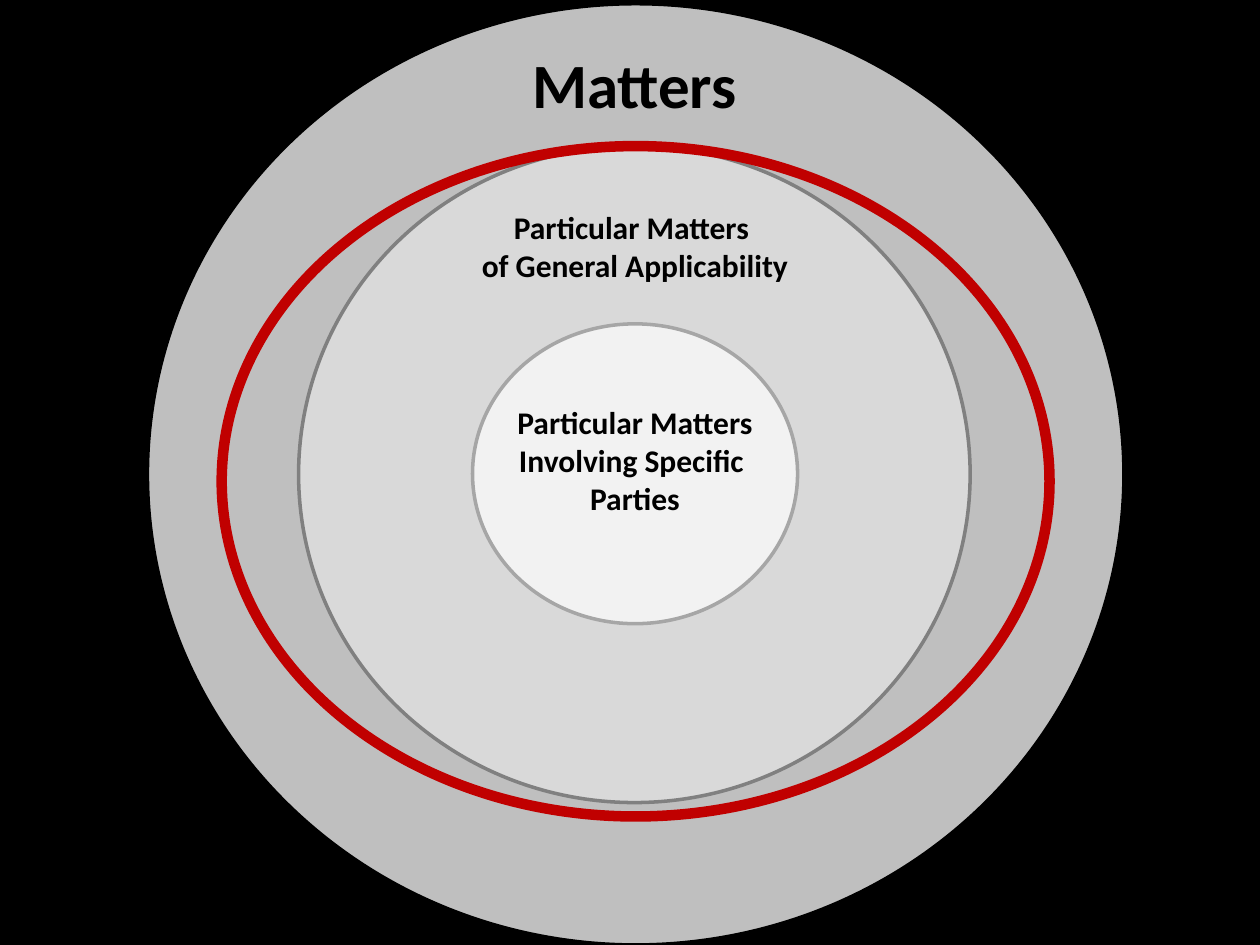
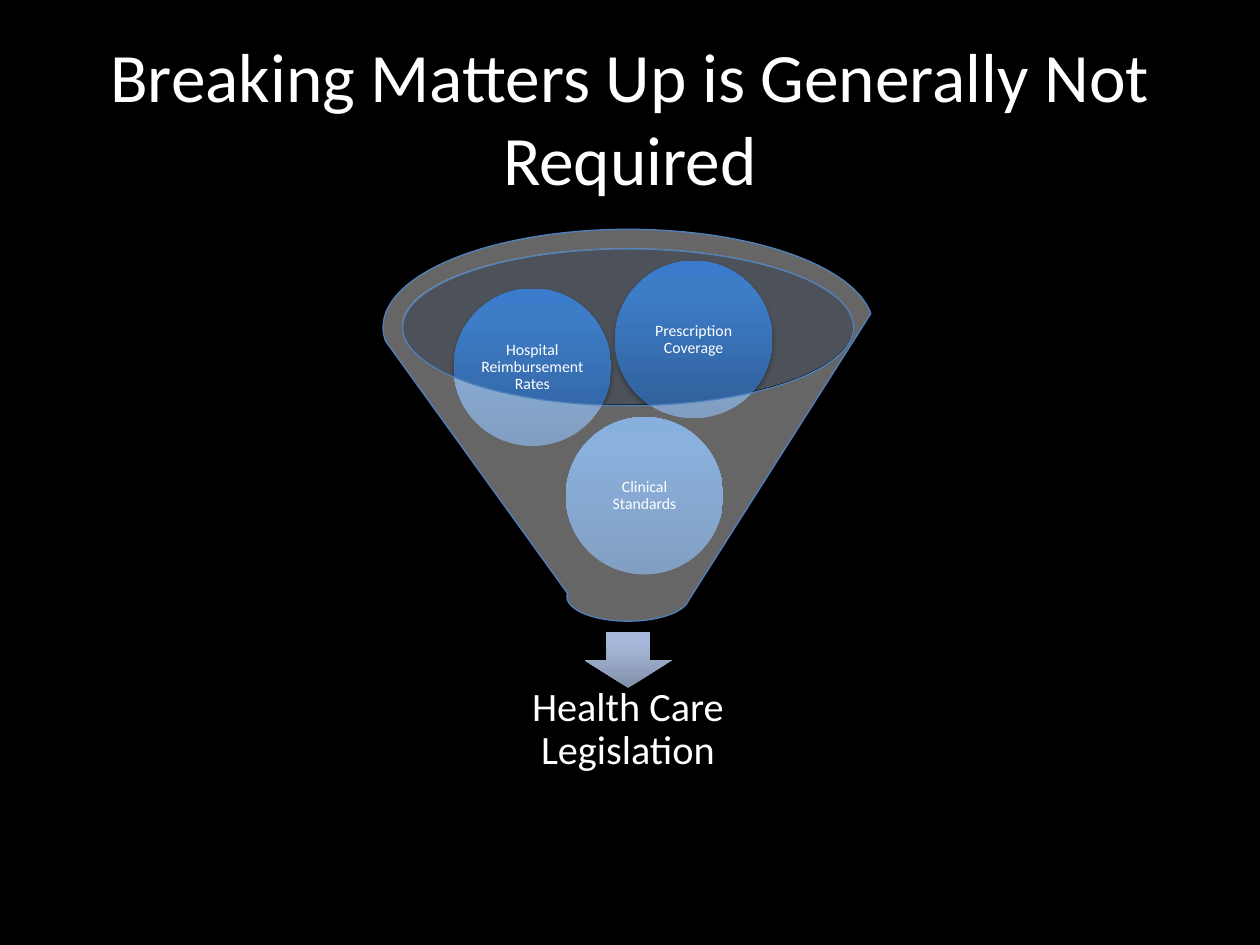
from copy import deepcopy
from dataclasses import dataclass

from lxml import etree
from pptx import Presentation
from pptx.dml.color import RGBColor
from pptx.enum import shapes, text
from pptx.oxml import ns
from pptx.util import Inches, Pt


@dataclass(frozen=True)
class Theme:
    font: str = "Calibri"
    black: str = "000000"
    white: str = "FFFFFF"
    outer: str = "BFBFBF"
    middle: str = "D9D9D9"
    middle_edge: str = "808080"
    inner: str = "F2F2F2"
    inner_edge: str = "A6A6A6"
    highlight: str = "C00000"
    rim: str = "C2CDE1"
    funnel_edge: str = "4F81BD"
    ball: tuple = ("2F5F99", "3D7CC7", "3A7CCB")
    arrow: tuple = ("818FA8", "A7B9DA", "A7BADC")
    stops: tuple = (0, 0.8, 1)
    title: float = 39.6
    heading: float = 36
    result: float = 23
    label: float = 18
    ball_label: float = 9


theme = Theme()
rgb = RGBColor.from_string


def add_figure(slide, kind, box, fill=None, edge=None, width=0, alpha=None):
    """Add a preset shape; a tuple as fill is a bottom-to-top gradient with a soft shadow."""
    figure = slide.shapes.add_shape(kind, *map(Inches, box))
    figure.shadow.inherit = False
    if edge:
        figure.line.color.rgb = rgb(edge)
        figure.line.width = Pt(width)
    else:
        figure.line.fill.background()
    properties = figure._element.spPr
    if fill is None:
        figure.fill.background()
    elif isinstance(fill, tuple):
        figure.fill.gradient()
        figure.fill.gradient_angle = 90
        stop_list = properties.find(".//" + ns.qn("a:gsLst"))
        stop_list.append(deepcopy(stop_list[-1]))
        for stop, color, position in zip(figure.fill.gradient_stops, fill, theme.stops):
            stop.color.rgb = rgb(color)
            stop.position = position
        shadow = etree.SubElement(properties.find(ns.qn("a:effectLst")), ns.qn("a:outerShdw"),
                                  blurRad=str(Pt(3.1)), dist=str(Pt(1.8)), dir="5400000",
                                  rotWithShape="0")
        shade = etree.SubElement(shadow, ns.qn("a:srgbClr"), val=theme.black)
        etree.SubElement(shade, ns.qn("a:alpha"), val="35000")
    else:
        figure.fill.solid()
        figure.fill.fore_color.rgb = rgb(fill)
        if alpha:
            color = properties.find(ns.qn("a:solidFill"))[0]
            etree.SubElement(color, ns.qn("a:alpha"), val=str(alpha * 1000))
    return figure


def write(shape, words, size, color, bold=False, spacing=None, inset=None,
          anchor=text.MSO_ANCHOR.MIDDLE, wrap=True):
    frame = shape.text_frame
    frame.text = words
    frame.word_wrap = wrap
    frame.vertical_anchor = anchor
    frame.auto_size = text.MSO_AUTO_SIZE.NONE if wrap else text.MSO_AUTO_SIZE.SHAPE_TO_FIT_TEXT
    if inset is not None:
        frame.margin_left = frame.margin_right = Inches(inset)
        frame.margin_top = frame.margin_bottom = Inches(inset)
    for paragraph in frame.paragraphs:
        paragraph.alignment = text.PP_ALIGN.CENTER
        if spacing:
            paragraph.line_spacing = spacing
        for run in paragraph.runs:
            run.font.name = theme.font
            run.font.size = Pt(size)
            run.font.bold = bold
            run.font.color.rgb = rgb(color)


prs = Presentation()
prs.slide_width, prs.slide_height = Inches(10), Inches(7.5)
backdrop = prs.slide_master.background.fill
backdrop.solid()
backdrop.fore_color.rgb = rgb(theme.black)
title_only, blank = prs.slide_layouts[5], prs.slide_layouts[6]
OVAL = shapes.MSO_SHAPE.OVAL

# Slide 1: nested kinds of matters
nested = prs.slides.add_slide(blank)
for box, fill, edge in (
    ((1.17, 0.03, 7.75, 7.47), theme.outer, theme.black),
    ((2.37, 1.16, 5.33, 5.21), theme.middle, theme.middle_edge),
    ((3.75, 2.57, 2.58, 2.38), theme.inner, theme.inner_edge),
):
    add_figure(nested, OVAL, box, fill, edge, 2)

for words, box, size in (
    ("Matters", (4.11, 0.31, 1.85, 0.71), theme.heading),
    ("Particular Matters \nof General Applicability", (3.52, 1.6, 3.04, 0.78), theme.label),
    ("Particular Matters\nInvolving Specific \nParties", (3.84, 3.15, 2.4, 1.11), theme.label),
):
    caption = nested.shapes.add_textbox(*map(Inches, box))
    write(caption, words, size, theme.black, bold=True, anchor=text.MSO_ANCHOR.TOP, wrap=False)

add_figure(nested, OVAL, (1.76, 1.16, 6.57, 5.32), edge=theme.highlight, width=6)

# Slide 2: separate topics funnelled into one matter
funnelled = prs.slides.add_slide(title_only)
title = funnelled.shapes.title
title.left, title.top, title.width, title.height = map(Inches, (0.5, 0.3, 9, 1.25))
write(title, "Breaking Matters Up is Generally Not Required", theme.title, theme.white)

add_figure(funnelled, OVAL, (3.19, 1.97, 3.58, 1.24), theme.rim, alpha=40)
add_figure(funnelled, shapes.MSO_SHAPE.DOWN_ARROW, (4.64, 5.02, 0.69, 0.44), theme.arrow)

result = funnelled.shapes.add_textbox(*map(Inches, (3.32, 5.38, 3.33, 0.83)))
write(result, "Health Care Legislation", theme.result, theme.white, spacing=0.9, inset=0.2)

BALL_SIZE = 1.25
for topic, left, top in (
    ("Clinical Standards", 4.49, 3.31),
    ("Hospital Reimbursement Rates", 3.6, 2.29),
    ("Prescription Coverage", 4.88, 2.07),
):
    ball = add_figure(funnelled, OVAL, (left, top, BALL_SIZE, BALL_SIZE), theme.ball)
    write(ball, topic, theme.ball_label, theme.white, spacing=0.9, inset=0.01)

add_figure(funnelled, shapes.MSO_SHAPE.FUNNEL, (3.04, 1.82, 3.89, 3.11),
           theme.white, theme.funnel_edge, 0.75, alpha=40)

prs.save("out.pptx")
